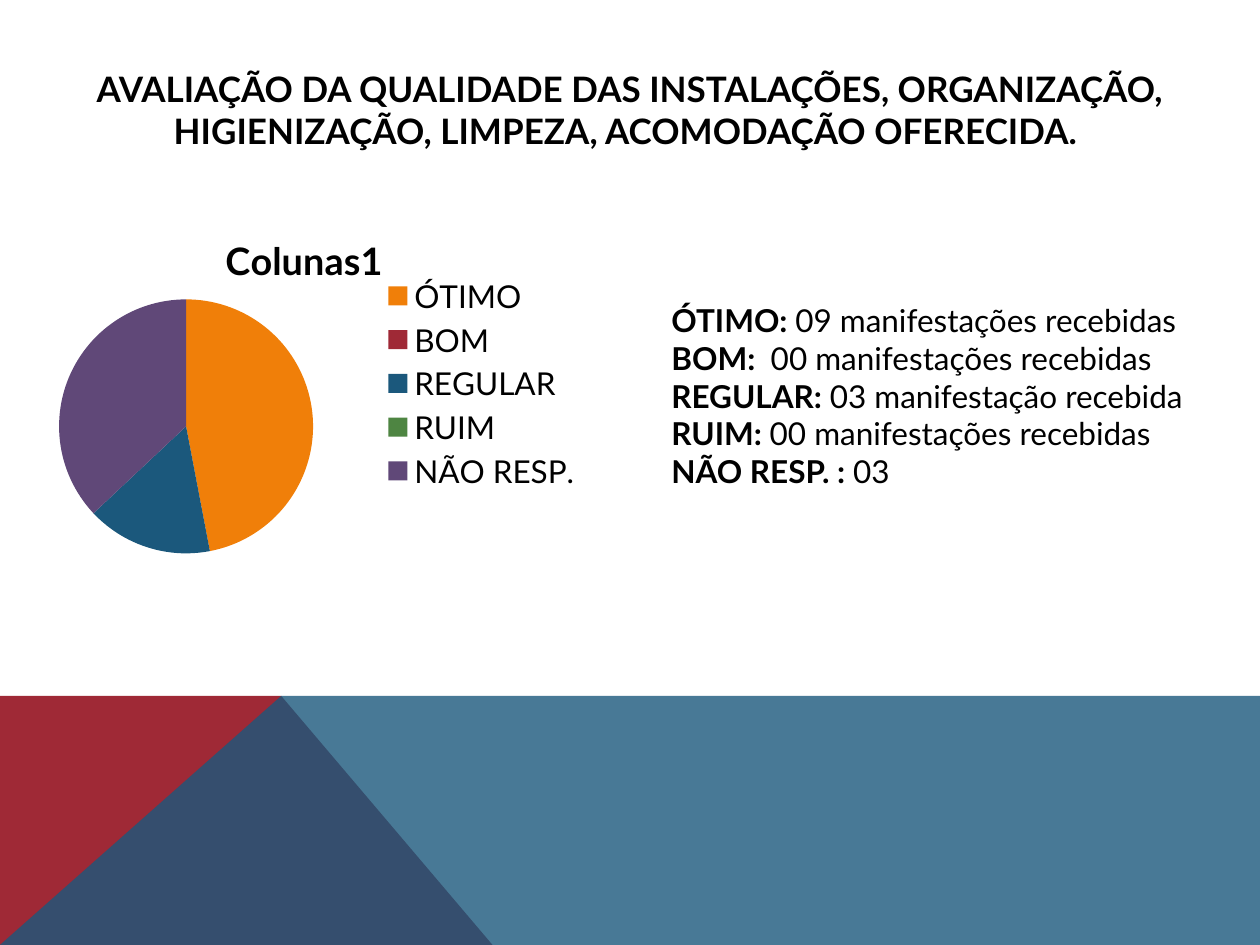
from lxml.etree import SubElement
from pptx import Presentation
from pptx.chart.data import CategoryChartData
from pptx.dml.color import RGBColor
from pptx.enum.chart import XL_CHART_TYPE, XL_LEGEND_POSITION
from pptx.enum.text import MSO_ANCHOR, MSO_AUTO_SIZE, PP_ALIGN
from pptx.oxml import parse_xml
from pptx.oxml.ns import nsdecls, qn
from pptx.util import Cm, Pt

BLACK = RGBColor(0x00, 0x00, 0x00)
ORANGE = RGBColor(0xF0, 0x7F, 0x09)
RED = RGBColor(0x9F, 0x29, 0x36)
BLUE = RGBColor(0x1B, 0x58, 0x7C)
GREEN = RGBColor(0x4E, 0x85, 0x42)
PURPLE = RGBColor(0x60, 0x48, 0x78)

TITLE = ("AVALIAÇÃO DA QUALIDADE DAS INSTALAÇÕES, ORGANIZAÇÃO, "
         "HIGIENIZAÇÃO, LIMPEZA, ACOMODAÇÃO OFERECIDA. ")
RATINGS = [("ÓTIMO", 47, ORANGE), ("BOM", 0, RED), ("REGULAR", 16, BLUE),
           ("RUIM", 0, GREEN), ("NÃO RESP.", 37, PURPLE)]
ANSWERS = [("ÓTIMO: ", "09 manifestações recebidas"),
           ("BOM:  ", "00 manifestações recebidas"),
           ("REGULAR: ", "03 manifestação recebida"),
           ("RUIM: ", "00 manifestações recebidas"),
           ("NÃO RESP. : ", "03")]


def format_font(font, size=18, bold=False, color=BLACK, name="Lato"):
    font.size = Pt(size)
    font.bold = bold
    font.name = name
    font.color.rgb = color


def add_text(paragraph, text, **text_format):
    run = paragraph.add_run()
    run.text = text
    format_font(run.font, **text_format)


def make_layout(target=None, **fractions):
    layout = parse_xml(f"<c:layout {nsdecls('c')}><c:manualLayout/></c:layout>")
    manual = layout[0]
    if target:
        SubElement(manual, qn("c:layoutTarget")).set("val", target)
    for axis in ("x", "y"):
        SubElement(manual, qn(f"c:{axis}Mode")).set("val", "edge")
    for key, value in fractions.items():
        SubElement(manual, qn(f"c:{key}")).set("val", str(value))
    return layout


class SlideBuilder:
    def __init__(self, presentation, slide):
        self.presentation = presentation
        self.slide = slide

    def place(self, shape, left, top, width, height):
        shape.left, shape.top = Cm(left), Cm(top)
        shape.width, shape.height = Cm(width), Cm(height)

    def polygon(self, points, color, opacity=100):
        vertices = [(Cm(x), Cm(y)) for x, y in points]
        builder = self.slide.shapes.build_freeform(*vertices[0])
        builder.add_line_segments(vertices[1:], close=True)
        shape = builder.convert_to_shape()
        shape.shadow.inherit = False
        shape.fill.solid()
        shape.fill.fore_color.rgb = color
        shape.line.fill.background()
        if opacity < 100:
            fill_color = shape.fill._xPr.find(qn("a:solidFill"))[0]
            SubElement(fill_color, qn("a:alpha")).set("val", str(opacity * 1000))

    def title(self, text, *box):
        shape = self.slide.shapes.title
        self.place(shape, *box)
        frame = shape.text_frame
        frame.auto_size = MSO_AUTO_SIZE.NONE
        frame.vertical_anchor = MSO_ANCHOR.MIDDLE
        paragraph = frame.paragraphs[0]
        paragraph.alignment = PP_ALIGN.CENTER
        add_text(paragraph, text, size=20, bold=True)

    def answer_list(self, answers, *box):
        shape = self.slide.placeholders[1]
        self.place(shape, *box)
        frame = shape.text_frame
        frame.auto_size = MSO_AUTO_SIZE.NONE
        for index, (label, answer) in enumerate(answers):
            paragraph = frame.add_paragraph() if index else frame.paragraphs[0]
            paragraph.space_before = Pt(0)
            properties = paragraph._p.get_or_add_pPr()
            properties.set("marL", "0")
            properties.set("indent", "0")
            SubElement(properties, qn("a:buNone"))
            add_text(paragraph, label, bold=True)
            add_text(paragraph, answer)

    def pie(self, name, ratings, *box):
        data = CategoryChartData()
        data.categories = [label for label, _, _ in ratings]
        data.add_series(name, [value for _, value, _ in ratings])
        chart = self.slide.shapes.add_chart(
            XL_CHART_TYPE.PIE, *(Cm(length) for length in box), data).chart
        format_font(chart.font)
        chart.has_title = True
        add_text(chart.chart_title.text_frame.paragraphs[0], name, size=21.6, bold=True)
        chart.has_legend = True
        chart.legend.position = XL_LEGEND_POSITION.RIGHT
        chart.legend.include_in_layout = True
        format_font(chart.legend.font)
        plot = chart.plots[0]
        plot.vary_by_categories = True
        plot.has_data_labels = False
        for index, (_, _, color) in enumerate(ratings):
            fill = plot.series[0].points[index].format.fill
            fill.solid()
            fill.fore_color.rgb = color
        self.arrange_pie(chart)

    def arrange_pie(self, chart):
        layouts = [
            ("c:title", "c:tx", make_layout(x=0.37, y=0.08)),
            ("c:plotArea", None, make_layout("inner", x=0.1, y=0.27, w=0.43, h=0.69)),
            ("c:legend", "c:legendPos", make_layout(x=0.64, y=0.2, w=0.35, h=0.6)),
        ]
        for tag, previous, layout in layouts:
            part = chart._chartSpace.chart.find(qn(tag))
            for old_layout in part.findall(qn("c:layout")):
                part.remove(old_layout)
            if previous:
                part.find(qn(previous)).addnext(layout)
            else:
                part.insert(0, layout)


def main():
    presentation = Presentation()
    presentation.slide_width, presentation.slide_height = Cm(25.4), Cm(19.05)
    slide = presentation.slides.add_slide(presentation.slide_layouts[1])
    builder = SlideBuilder(presentation, slide)
    bottom, band_top, peak, right = 19.05, 14.03, 5.67, 25.4
    builder.polygon([(0, bottom), (0, band_top), (peak, band_top), (9.93, bottom)], RED)
    builder.polygon([(0, bottom), (peak, band_top), (right, band_top), (right, bottom)],
                    BLUE, opacity=80)
    builder.title(TITLE, 1.19, 1.02, 23.01, 2.36)
    builder.answer_list(ANSWERS, 13.28, 5.94, 11.13, 4.11)
    builder.pie("Colunas1", RATINGS, 0, 3.96, 11.91, 7.54)
    presentation.save("out.pptx")


if __name__ == "__main__":
    main()
